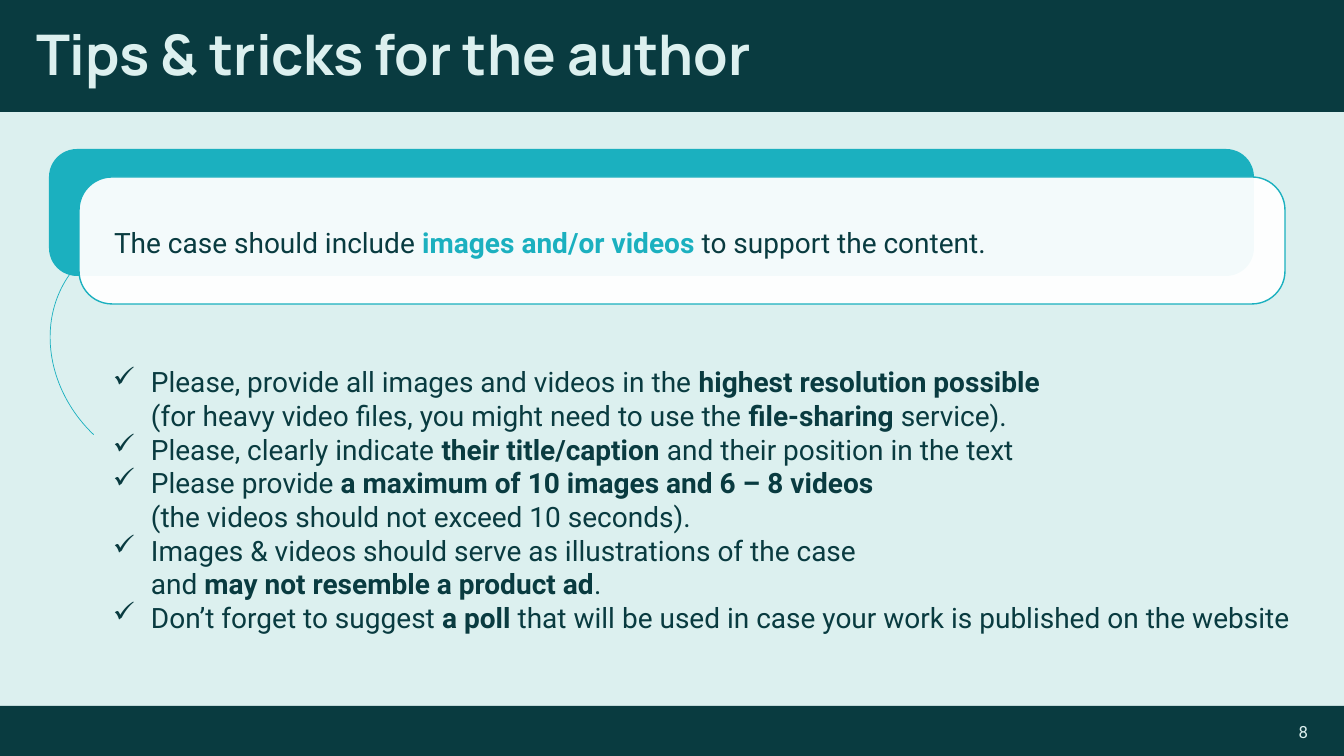
from lxml.etree import SubElement
from pptx import Presentation
from pptx.dml.color import RGBColor
from pptx.enum.shapes import MSO_SHAPE as Shape
from pptx.enum.text import MSO_ANCHOR as Anchor, MSO_AUTO_SIZE as AutoSize, PP_ALIGN as Align
from pptx.oxml.ns import qn
from pptx.util import Emu, Pt

EMU_PER_PX = 914400 / 100.8
COLOURS = {"dark": "093B40", "pale": "DCF0EF", "teal": "1BB0BF", "white": "FFFFFF"}
WIDTH, HEIGHT = 1344, 756
BULLET_INDENT = 38

TIPS = [
    "Please, provide all images and videos in the **highest resolution possible**\n"
    "(for heavy video files, you might need to use the **file-sharing** service).",
    "Please, clearly indicate **their title/caption** and their position in the text",
    "Please provide **a maximum of 10 images and 6 – 8 videos**\n"
    "(the videos should not exceed 10 seconds).",
    "Images & videos should serve as illustrations of the case\n"
    "and **may not resemble a product ad**.",
    "Don’t forget to suggest **a poll** that will be used in case "
    "your work is published on the website",
]


def px(length):
    return Emu(round(length * EMU_PER_PX))


def colour(name):
    return RGBColor.from_string(COLOURS[name])


def set_values(target, values):
    for name, value in values.items():
        setattr(target, name, value)


def place(item, bounds):
    set_values(item, dict(zip(("left", "top", "width", "height"), map(px, bounds))))


def add_figure(page, kind, bounds, fill=None, line=None, line_width=1, radius=None, opacity=100):
    figure = page.shapes.add_shape(kind, *map(px, bounds))
    figure.shadow.inherit = False
    if fill:
        figure.fill.solid()
        figure.fill.fore_color.rgb = colour(fill)
    else:
        figure.fill.background()
    if line:
        figure.line.color.rgb = colour(line)
        figure.line.width = Pt(line_width)
    else:
        figure.line.fill.background()
    if radius:
        figure.adjustments[0] = radius
    if opacity < 100:
        tint = figure.fill._xPr.find(".//" + qn("a:srgbClr"))
        SubElement(tint, qn("a:alpha"), val=str(opacity * 1000))
    return figure


def add_text_box(page, bounds, **frame_values):
    frame = page.shapes.add_textbox(*map(px, bounds)).text_frame
    set_values(frame, {"word_wrap": True, **frame_values})
    return frame


def write(para, text, size, name="Roboto", shade="dark", bold_shade=None, bold=False):
    for row, line in enumerate(text.split("\n")):
        if row:
            para.add_line_break()
        for index, part in enumerate(line.split("**")):
            if part:
                strong = index % 2 == 1
                span = para.add_run()
                span.text = part
                set_values(span.font, {"name": name, "size": Pt(size), "bold": bold or strong})
                span.font.color.rgb = colour(bold_shade if strong and bold_shade else shade)


def add_check_mark(para):
    props = para._p.get_or_add_pPr()
    indent = px(BULLET_INDENT)
    props.set("marL", str(indent))
    props.set("indent", str(-indent))
    SubElement(props, qn("a:buChar"), char="✓")


def add_title(page, text):
    title = page.shapes.title
    place(title, (26, 15, 1291, 84))
    frame = title.text_frame
    set_values(frame, {"vertical_anchor": Anchor.MIDDLE, "auto_size": AutoSize.NONE})
    para = frame.paragraphs[0]
    set_values(para, {"alignment": Align.LEFT, "line_spacing": 0.9})
    write(para, text, 40, name="Manrope", shade="pale", bold=True)
    title.element.getparent().append(title.element)


def add_page_number(page, number):
    frame = add_text_box(page, (950, 716, 368, 31), vertical_anchor=Anchor.MIDDLE)
    para = frame.paragraphs[0]
    para.alignment = Align.RIGHT
    write(para, number, 12, shade="pale")


def add_callout(page, text):
    add_figure(page, Shape.ROUNDED_RECTANGLE, (49, 149, 1205, 127), fill="teal", radius=0.22)
    add_figure(page, Shape.ROUNDED_RECTANGLE, (79, 177, 1206, 127), fill="white",
               line="teal", radius=0.26, opacity=95)
    margins = {f"margin_{side}": px(8) for side in ("left", "top", "right", "bottom")}
    frame = add_text_box(page, (106, 192, 1126, 101), vertical_anchor=Anchor.MIDDLE, **margins)
    para = frame.paragraphs[0]
    para.space_after = Pt(7.5)
    write(para, text, 20, bold_shade="teal")


def add_checklist(page, tips):
    frame = add_text_box(page, (103, 360, 1206, 281), auto_size=AutoSize.SHAPE_TO_FIT_TEXT)
    for index, tip in enumerate(tips):
        para = frame.add_paragraph() if index else frame.paragraphs[0]
        add_check_mark(para)
        write(para, tip, 20)
    arc = add_figure(page, Shape.ARC, (43, 239, 258, 227), line="teal", line_width=0.5)
    arc.rotation = 223.6


def main():
    deck = Presentation()
    set_values(deck, {"slide_width": px(WIDTH), "slide_height": px(HEIGHT)})
    page = deck.slides.add_slide(deck.slide_layouts.get_by_name("Title Only"))
    page.background.fill.solid()
    page.background.fill.fore_color.rgb = colour("pale")
    for top, height in ((706, 50), (0, 112)):
        add_figure(page, Shape.RECTANGLE, (0, top, WIDTH, height), fill="dark")
    add_title(page, "Tips & tricks for the author")
    add_page_number(page, "8")
    add_callout(page, "The case should include **images and/or videos** to support the content.")
    add_checklist(page, TIPS)
    deck.save("out.pptx")


if __name__ == "__main__":
    main()
